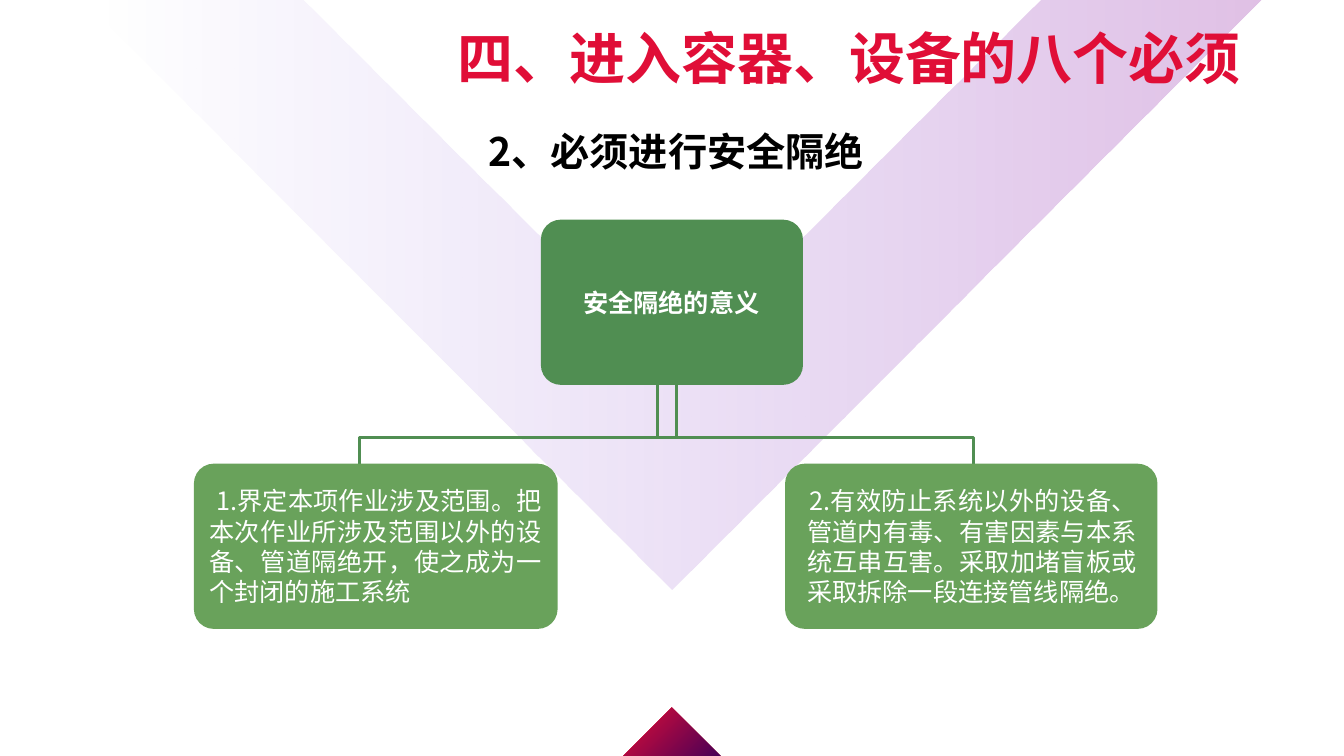
from dataclasses import dataclass

from lxml.etree import SubElement
from pptx import Presentation
from pptx.dml.color import RGBColor
from pptx.enum.shapes import MSO_SHAPE as Preset
from pptx.enum.text import MSO_ANCHOR as Anchor, PP_ALIGN as Align
from pptx.oxml.ns import qn
from pptx.util import Pt

FONT = "Noto Sans CJK SC"
COLORS = {
    "red": "E00E37",
    "plum": "490056",
    "violet": "4D1BD9",
    "purple": "830098",
    "dark_green": "508E52",
    "green": "69A25B",
    "black": "000000",
    "white": "FFFFFF",
}
ROW_TOP, CARD_HEIGHT, BUS_TOP = 331.2, 118, 312.5


@dataclass(frozen=True)
class Style:
    size: float
    color: str
    bold: bool = False
    align: Align = Align.LEFT
    indent: float = 0


@dataclass(frozen=True)
class Card:
    text: str
    left: float
    top: float
    width: float
    fill: str
    insets: tuple[float, float]
    style: Style


@dataclass(frozen=True)
class Branch:
    stem: float
    end: float


@dataclass(frozen=True)
class Band:
    points: list[tuple[float, float]]
    stops: list[tuple[str, int]]
    angle: float


CARDS = [
    Card("安全隔绝的意义", 386.4, 156.9, 187.2, "dark_green", (0, 1),
         Style(18, "white", True, Align.CENTER)),
    Card("1.界定本项作业涉及范围。把本次作业所涉及范围以外的设备、管道隔绝开，使之成为一个封闭的施工系统",
         138.5, ROW_TOP, 259.8, "green", (6.8, 7.1),
         Style(18, "white", align=Align.JUSTIFY, indent=5)),
    Card("2.有效防止系统以外的设备、管道内有毒、有害因素与本系统互串互害。采取加堵盲板或采取拆除一段连接管线隔绝。",
         560.8, ROW_TOP, 266, "green", (11.6, 10.5),
         Style(18, "white", align=Align.JUSTIFY, indent=1.4)),
]
BRANCHES = [Branch(469.4, 695.6), Branch(483.2, 257)]
BANDS = [
    Band([(480, 505.5), (514.5, 540), (445.5, 540)],
         [("red", 100), ("plum", 100)], -45),
    Band([(480, 421.2), (59, 0), (216.7, 0), (480, 263), (743.3, 0), (901, 0)],
         [("violet", 0), ("purple", 25)], 0),
]


def color(name: str) -> RGBColor:
    return RGBColor.from_string(COLORS[name])


def write(frame, text: str, style: Style, insets=(0, 0), anchor=Anchor.TOP) -> None:
    frame.text = text
    frame.word_wrap = True
    frame.vertical_anchor = anchor
    frame.margin_left, frame.margin_right = map(Pt, insets)
    frame.margin_top = frame.margin_bottom = 0
    paragraph = frame.paragraphs[0]
    paragraph.alignment = style.align
    paragraph.line_spacing = Pt(style.size * 1.2)
    paragraph.space_before = Pt(0)
    paragraph._p.get_or_add_pPr().set("indent", str(Pt(style.indent)))
    for run in paragraph.runs:
        run.font.name = FONT
        run.font.size = Pt(style.size)
        run.font.bold = style.bold
        run.font.color.rgb = color(style.color)
        SubElement(run.font._element, qn("a:ea"), typeface=FONT)


def outline(slide, points: list[tuple[float, float]], close: bool):
    builder = slide.shapes.build_freeform(*map(Pt, points[0]))
    builder.add_line_segments([(Pt(x), Pt(y)) for x, y in points[1:]], close=close)
    shape = builder.convert_to_shape()
    shape.shadow.inherit = False
    return shape


def draw_band(slide, band: Band) -> None:
    shape = outline(slide, band.points, True)
    shape.line.fill.background()
    shape.fill.gradient()
    shape.fill.gradient_angle = band.angle
    for stop, (name, opacity) in zip(shape.fill.gradient_stops, band.stops):
        stop.color.rgb = color(name)
        SubElement(stop._gs[0], qn("a:alpha"), val=str(opacity * 1000))


def draw_branch(slide, branch: Branch) -> None:
    shape = outline(slide, [(branch.stem, 160), (branch.stem, BUS_TOP),
                            (branch.end, BUS_TOP), (branch.end, ROW_TOP)], False)
    shape.fill.background()
    shape.line.color.rgb = color("dark_green")
    shape.line.width = Pt(2.04)


def draw_card(slide, card: Card) -> None:
    shape = slide.shapes.add_shape(
        Preset.ROUNDED_RECTANGLE,
        *map(Pt, (card.left, card.top, card.width, CARD_HEIGHT)))
    shape.adjustments[0] = 0.12
    shape.shadow.inherit = False
    shape.fill.solid()
    shape.fill.fore_color.rgb = color(card.fill)
    shape.line.fill.background()
    write(shape.text_frame, card.text, card.style, card.insets, Anchor.MIDDLE)


def main() -> None:
    presentation = Presentation()
    presentation.slide_width, presentation.slide_height = Pt(960), Pt(540)
    slide = presentation.slides.add_slide(presentation.slide_layouts[5])
    for band in BANDS:
        draw_band(slide, band)
    for branch in BRANCHES:
        draw_branch(slide, branch)
    for card in CARDS:
        draw_card(slide, card)

    subtitle = slide.shapes.add_textbox(*map(Pt, (348.9, 90.8, 279, 35)))
    write(subtitle.text_frame, "2、必须进行安全隔绝", Style(28, "black", True))
    title = slide.shapes.title
    title.left, title.top, title.width, title.height = map(Pt, (326.8, 17, 624, 50))
    write(title.text_frame, "四、进入容器、设备的八个必须", Style(40, "red", True))
    slide.shapes._spTree.append(title._element)
    presentation.save("out.pptx")


if __name__ == "__main__":
    main()
